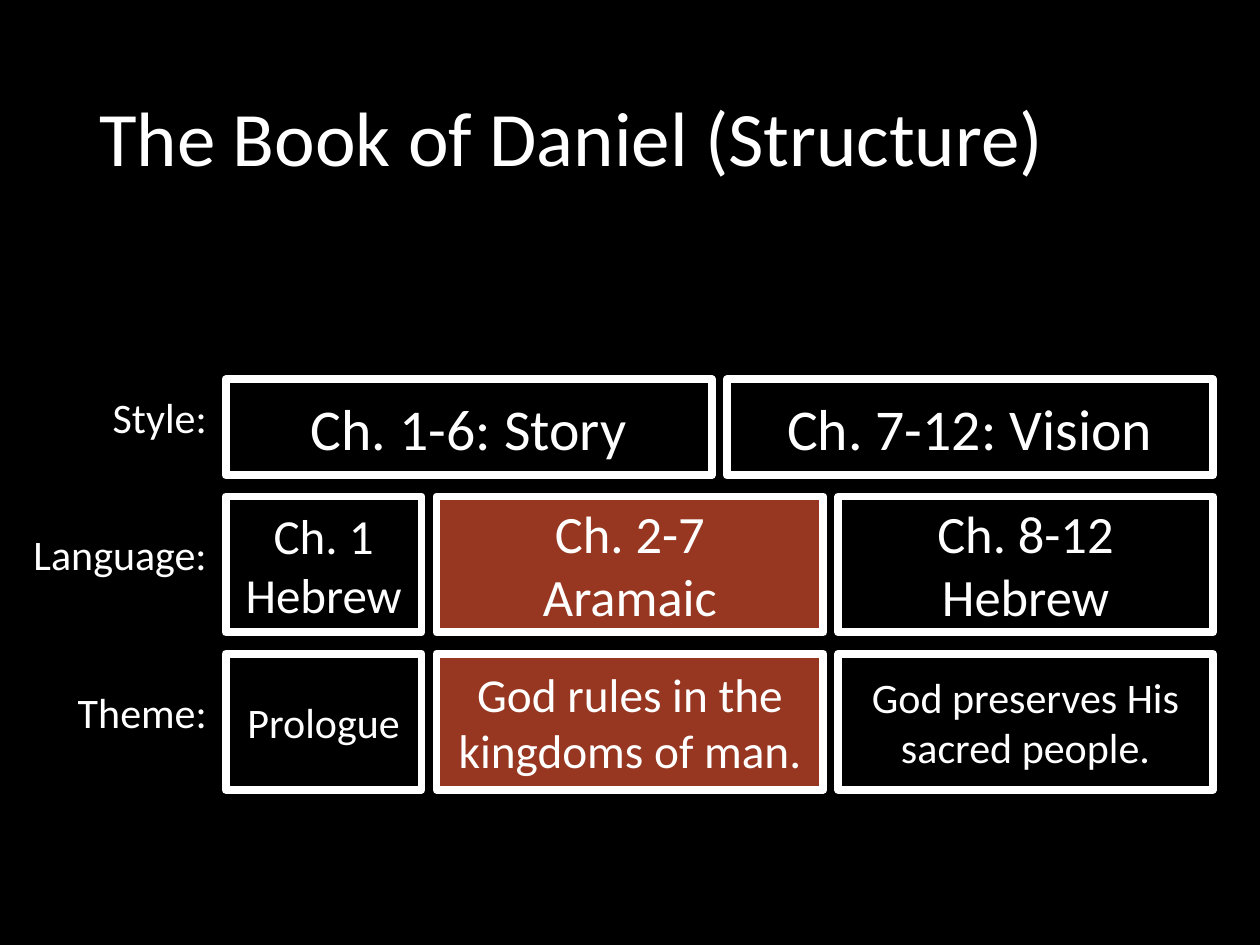
import pptx
import pptx.util
import pptx.dml.color
import pptx.enum.shapes
import pptx.enum.text

Cm = pptx.util.Cm
Pt = pptx.util.Pt
ALIGN = pptx.enum.text.PP_ALIGN

# Content
WHITE, BLACK, RUST = "FFFFFF", "000000", "973721"
TITLE = "The Book of Daniel (Structure)"
HALVES = (9.8, 9.8)
THIRDS = (3.95, 7.8, 7.55)
# label, label left, label drop, row height, box widths, boxes (text, size, fill)
ROWS = [
    ("Style:", 0.43, 0.05, 1.93, HALVES, [
        ("Ch. 1-6: Story", 33, None),
        ("Ch. 7-12: Vision", 33, None)]),
    ("Language:", 0, 0.45, 2.74, THIRDS, [
        ("Ch. 1 Hebrew", 28, None),
        ("Ch. 2-7\nAramaic", 30, RUST),
        ("Ch. 8-12\nHebrew", 30, None)]),
    ("Theme:", 0.43, 0.45, 2.74, THIRDS, [
        ("Prologue", 24, None),
        ("God rules in the kingdoms of man.", 27, RUST),
        ("God preserves His sacred people.", 24, None)]),
]
LEFT, TOP = 4.55, 7.65
GAP_X, GAP_Y = 0.3, 0.43
LABEL_END, LABEL_H = 4.42, 1.42


def color(code):
    return pptx.dml.color.RGBColor.from_string(code)


def write(shape, text, size, align):
    frame = shape.text_frame
    frame.word_wrap = True
    frame.vertical_anchor = pptx.enum.text.MSO_ANCHOR.MIDDLE
    frame.text = text
    for par in frame.paragraphs:
        par.alignment = align
        par.font.name = "Calibri"
        par.font.size = Pt(size)
        par.font.color.rgb = color(WHITE)


def label(slide, text, size, align, *place):
    box = slide.shapes.add_textbox(*map(Cm, place))
    write(box, text, size, align)
    return box


def block(slide, text, size, fill, *place):
    box = slide.shapes.add_shape(
        pptx.enum.shapes.MSO_SHAPE.RECTANGLE, *map(Cm, place))
    box.shadow.inherit = False
    if fill:
        box.fill.solid()
        box.fill.fore_color.rgb = color(fill)
    else:
        box.fill.background()
    box.line.color.rgb = color(WHITE)
    box.line.width = Pt(4.5)
    write(box, text, size, ALIGN.CENTER)


def main():
    deck = pptx.Presentation()
    deck.slide_width, deck.slide_height = Cm(25.4), Cm(19.05)
    slide = deck.slides.add_slide(deck.slide_layouts[6])
    slide.background.fill.solid()
    slide.background.fill.fore_color.rgb = color(BLACK)

    # Title
    title = label(slide, TITLE, 44, ALIGN.LEFT, 1.75, 1.01, 21.9, 3.68)
    title.text_frame.paragraphs[0].line_spacing = 0.9

    # Rows of boxes, each with its label
    y = TOP
    for name, start, drop, height, widths, boxes in ROWS:
        label(slide, name, 24, ALIGN.RIGHT,
              start, y + drop, LABEL_END - start, LABEL_H)
        x = LEFT
        for width, (text, size, fill) in zip(widths, boxes):
            block(slide, text, size, fill, x, y, width, height)
            x += width + GAP_X
        y += height + GAP_Y

    deck.save("out.pptx")


if __name__ == "__main__":
    main()
